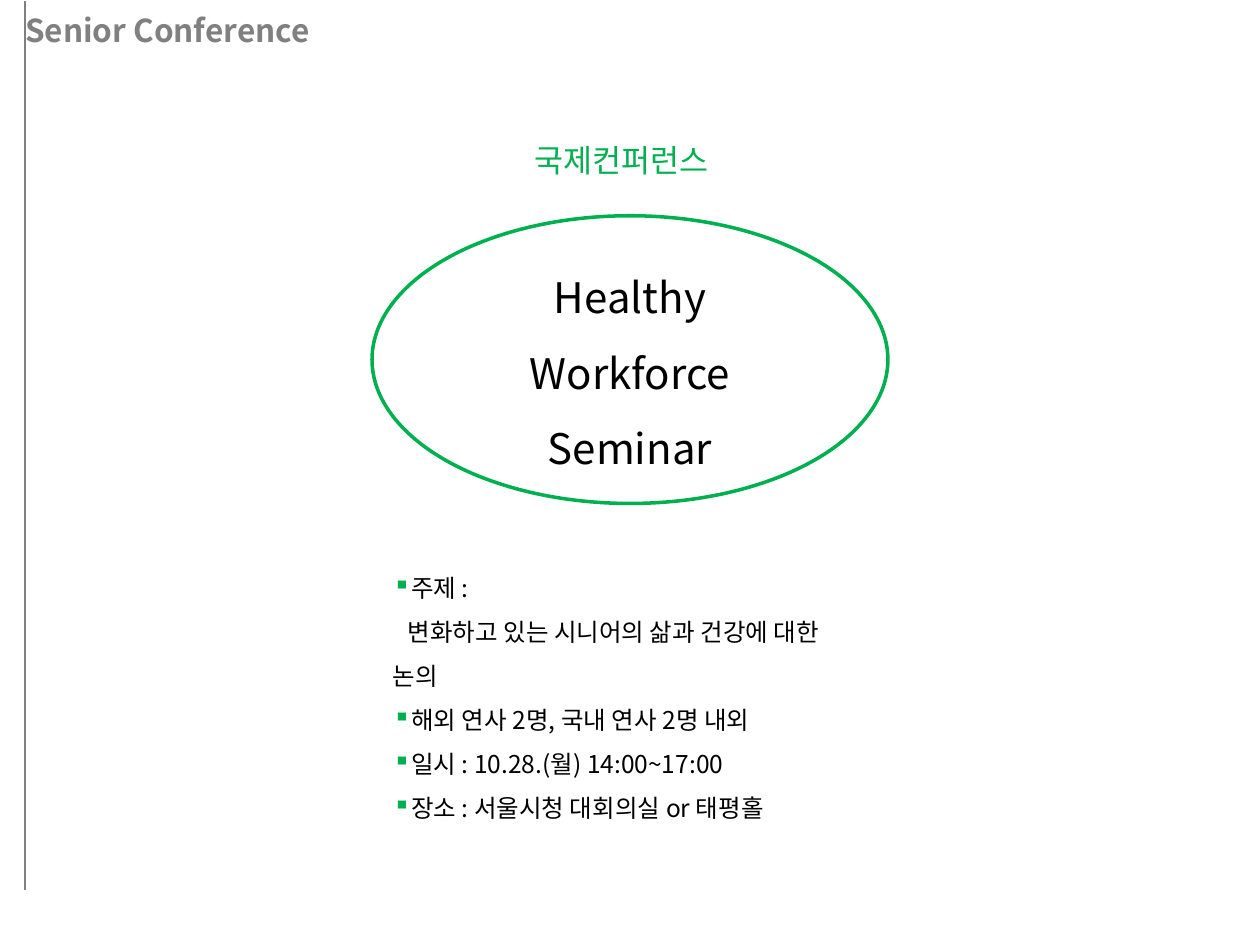
from lxml import etree
from pptx import Presentation
from pptx.dml.color import RGBColor
from pptx.enum import shapes, text
from pptx.oxml import ns
from pptx.util import Cm, Pt

GREEN = RGBColor(0x00, 0xB0, 0x50)
GRAY = RGBColor(0x80, 0x80, 0x80)
BLACK = RGBColor(0x00, 0x00, 0x00)
FONT = "Noto Sans CJK KR"
HANG = Cm(0.3)

DETAILS = [
    ("주제 :", True),
    ("변화하고 있는 시니어의 삶과 건강에 대한 논의", False),
    ("해외 연사 2명, 국내 연사 2명 내외", True),
    ("일시 : 10.28.(월) 14:00~17:00", True),
    ("장소 : 서울시청 대회의실 or 태평홀", True),
]


def add_child(parent, tag, **attributes):
    return etree.SubElement(parent, ns.qn(tag), **attributes)


def set_attributes(target, values):
    for name, value in values.items():
        setattr(target, name, value)


def write(paragraph, words, size, color, bold=False, **layout):
    """Fill a paragraph with one run, set for Latin and Korean script."""
    set_attributes(paragraph, layout)
    run = paragraph.add_run()
    run.text = words
    set_attributes(run.font, {"name": FONT, "size": Pt(size), "bold": bold})
    run.font.color.rgb = color
    add_child(run.font._element, "a:ea", typeface=FONT)


def next_paragraph(frame, index):
    return frame.add_paragraph() if index else frame.paragraphs[0]


def indent(paragraph, bulleted):
    """Hang the text after a green square, or indent its first line only."""
    properties = paragraph._p.get_or_add_pPr()
    properties.set("marL", str(HANG if bulleted else 0))
    properties.set("indent", str(-HANG if bulleted else HANG))
    if bulleted:
        color = add_child(properties, "a:buClr")
        add_child(color, "a:srgbClr", val=str(GREEN))
        add_child(properties, "a:buChar", char="▪")


def add_margin_line(slide):
    line = slide.shapes.add_connector(
        shapes.MSO_CONNECTOR.STRAIGHT, Cm(0.5), Cm(0.03), Cm(0.5), Cm(17.95))
    line.line.color.rgb = GRAY
    line.line.width = Pt(1.25)
    add_child(line._element.spPr, "a:effectLst")


def add_panel(slide, preset, left, top, width, height):
    """Add an unfilled shape with vertically centred text."""
    panel = slide.shapes.add_shape(preset, left, top, width, height)
    panel.shadow.inherit = False
    panel.fill.background()
    set_attributes(panel.text_frame, {
        "vertical_anchor": text.MSO_ANCHOR.MIDDLE, "word_wrap": True})
    return panel


def add_text(slide, left, top, width, height, wrap):
    frame = slide.shapes.add_textbox(left, top, width, height).text_frame
    set_attributes(frame, {
        "word_wrap": wrap, "auto_size": text.MSO_AUTO_SIZE.SHAPE_TO_FIT_TEXT})
    return frame


def add_seminar(slide):
    oval = add_panel(slide, shapes.MSO_SHAPE.OVAL,
                     Cm(7.5), Cm(4.35), Cm(10.4), Cm(5.8))
    oval.line.color.rgb = GREEN
    oval.line.width = Pt(2)
    for index, words in enumerate(["Healthy Workforce", "Seminar"]):
        write(next_paragraph(oval.text_frame, index), words, 24, BLACK,
              alignment=text.PP_ALIGN.CENTER, line_spacing=1.5)


def add_heading(slide):
    heading = add_panel(slide, shapes.MSO_SHAPE.ROUNDED_RECTANGLE,
                        Cm(-0.35), Cm(0.1), Cm(11), Cm(1))
    heading.line.fill.background()
    heading.text_frame.margin_left = Cm(0.81)
    write(heading.text_frame.paragraphs[0], "Senior Conference", 18, GRAY,
          bold=True, alignment=text.PP_ALIGN.LEFT)


def add_details(slide):
    frame = add_text(slide, Cm(7.67), Cm(11.13), Cm(10.05), Cm(4.75), True)
    for index, (words, bulleted) in enumerate(DETAILS):
        paragraph = next_paragraph(frame, index)
        indent(paragraph, bulleted)
        write(paragraph, words, 14, BLACK, line_spacing=1.5)


def main():
    deck = Presentation()
    set_attributes(deck, {"slide_width": Cm(25.4), "slide_height": Cm(19.05)})
    slide = deck.slides.add_slide(deck.slide_layouts[6])
    add_margin_line(slide)
    add_seminar(slide)
    add_heading(slide)
    topic = add_text(slide, Cm(10.52), Cm(2.72), Cm(4.37), Cm(1.02), False)
    write(topic.paragraphs[0], "국제컨퍼런스", 18, GREEN)
    add_details(slide)
    deck.save("out.pptx")


if __name__ == "__main__":
    main()
